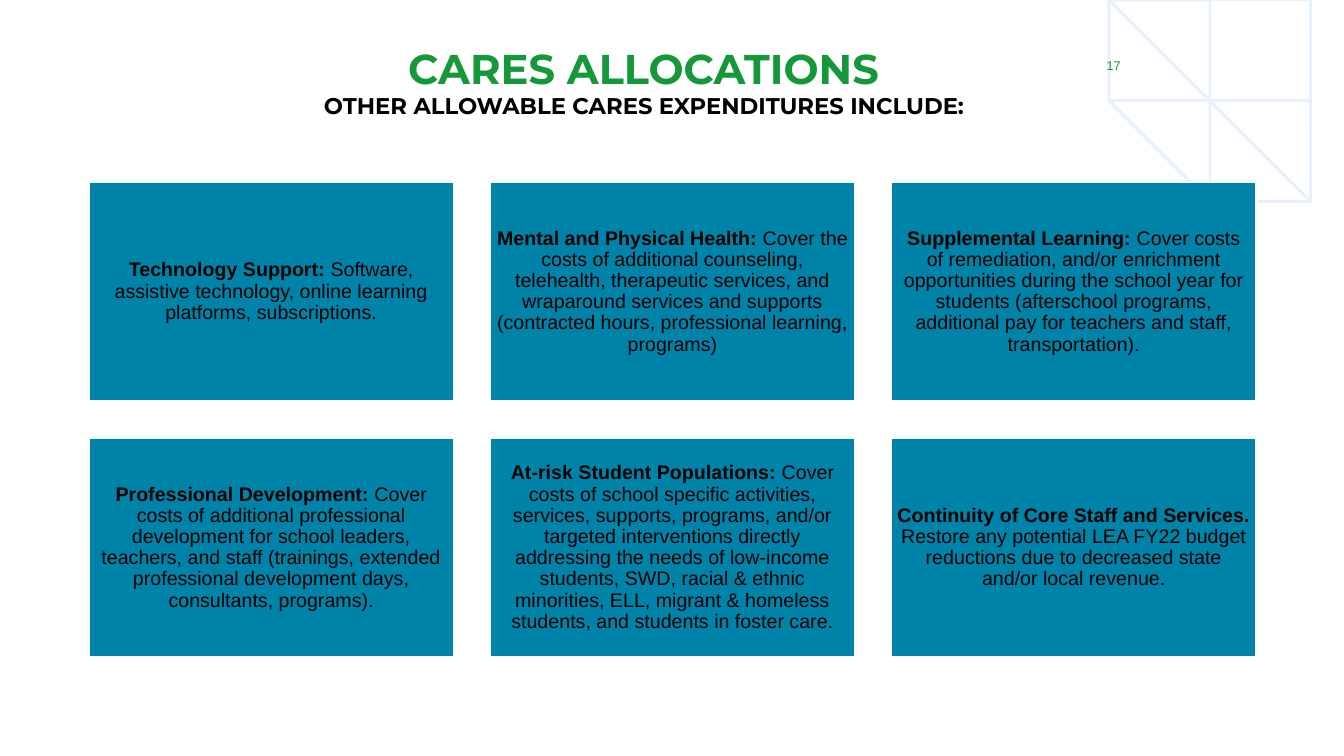
"""Build the slide on allowable CARES expenditures."""
from dataclasses import dataclass
from math import asin, cos, pi, sin

from pptx import Presentation
from pptx import util as u
from pptx.dml.color import RGBColor
from pptx.enum import shapes, text


@dataclass
class Theme:
    """Colours, fonts and type sizes."""
    green: str = "159839"
    black: str = "000000"
    teal: str = "0083A9"
    white: str = "FFFFFF"
    pale: str = "E6F0FE"
    head: str = "Montserrat"
    body: str = "Arial"
    big: float = 29.7
    mid: float = 16.2
    small: float = 14
    tiny: float = 9


def write(para, words, *, font, size, color, bold=False):
    """Add one formatted run to a paragraph."""
    run = para.add_run()
    run.text = words
    run.font.name = font
    run.font.size = u.Pt(size)
    run.font.bold = bold
    run.font.color.rgb = RGBColor.from_string(color)


class Deck:
    """Hold the theme and the current slide."""

    def __init__(self, theme):
        """Start a wide deck with one title slide."""
        self.theme = theme
        self.file = Presentation()
        self.file.slide_width = u.Inches(13.33)
        self.file.slide_height = u.Inches(7.5)
        self.slide = self.file.slides.add_slide(self.file.slide_layouts[5])

    def frame(self, shape, inset, anchor, space):
        """Set up a text frame and return its centred paragraph."""
        body = shape.text_frame
        body.word_wrap = True
        body.auto_size = text.MSO_AUTO_SIZE.NONE
        body.vertical_anchor = anchor
        body.margin_left = body.margin_right = u.Inches(inset)
        body.margin_top = body.margin_bottom = u.Inches(inset)
        para = body.paragraphs[0]
        para.alignment = text.PP_ALIGN.CENTER
        para.line_spacing = space
        return para

    def edge(self, shape, color, width):
        """Give a shape a plain line and no shadow."""
        shape.shadow.inherit = False
        shape.line.color.rgb = RGBColor.from_string(color)
        shape.line.width = u.Pt(width)

    def rings(self, x, y, radius, step, count, parts=12):
        """Draw the part of some rings that lies on the slide, as one outline."""
        pen = None
        for k in range(count):
            r = radius - k * step
            start = asin(-y / r)
            turns = [start + (pi / 2 - start) * i / parts for i in range(parts + 1)]
            first, *rest = [(x - r * cos(a), y + r * sin(a)) for a in turns]
            if pen is None:
                pen = self.slide.shapes.build_freeform(*first, scale=u.Inches(1))
            else:
                pen.move_to(*first)
            pen.add_line_segments(rest, close=False)
        shape = pen.convert_to_shape()
        shape.fill.background()
        self.edge(shape, self.theme.pale, 1.9)

    def title(self, main, sub, box):
        """Fill the title placeholder with a heading and a line below."""
        t = self.theme
        shape = self.slide.shapes.title
        shape.left, shape.top, shape.width, shape.height = map(u.Inches, box)
        para = self.frame(shape, 0.08, text.MSO_ANCHOR.TOP, 0.95)
        write(para, main, font=t.head, size=t.big, color=t.green, bold=True)
        para.add_line_break()
        write(para, sub, font=t.head, size=t.mid, color=t.black, bold=True)

    def label(self, words, box):
        """Add a small centred text box."""
        t = self.theme
        shape = self.slide.shapes.add_textbox(*map(u.Inches, box))
        para = self.frame(shape, 0.05, text.MSO_ANCHOR.MIDDLE, 1.0)
        write(para, words, font=t.body, size=t.tiny, color=t.green)

    def card(self, lead, words, box):
        """Add a filled card with a bold lead and plain text."""
        t = self.theme
        kind = shapes.MSO_SHAPE.RECTANGLE
        shape = self.slide.shapes.add_shape(kind, *map(u.Inches, box))
        shape.fill.solid()
        shape.fill.fore_color.rgb = RGBColor.from_string(t.teal)
        self.edge(shape, t.white, 1.5)
        para = self.frame(shape, 0.06, text.MSO_ANCHOR.MIDDLE, 0.9)
        style = dict(font=t.body, size=t.small, color=t.black)
        write(para, lead + " ", bold=True, **style)
        write(para, words, **style)


CARDS = [
    ("Technology Support:",
     "Software, assistive technology, online learning platforms, subscriptions."),
    ("Mental and Physical Health:",
     "Cover the costs of additional counseling, telehealth, therapeutic services, "
     "and wraparound services and supports (contracted hours, professional "
     "learning, programs)"),
    ("Supplemental Learning:",
     "Cover costs of remediation, and/or enrichment opportunities during the "
     "school year for students (afterschool programs, additional pay for "
     "teachers and staff, transportation)."),
    ("Professional Development:",
     "Cover costs of additional professional development for school leaders, "
     "teachers, and staff (trainings, extended professional development days, "
     "consultants, programs)."),
    ("At-risk Student Populations:",
     "Cover costs of school specific activities, services, supports, programs, "
     "and/or targeted interventions directly addressing the needs of low-income "
     "students, SWD, racial & ethnic minorities, ELL, migrant & homeless "
     "students, and students in foster care."),
    ("Continuity of Core Staff and Services.",
     "Restore any potential LEA FY22 budget reductions due to decreased state "
     "and/or local revenue."),
]


def main():
    """Draw the slide and save it."""
    deck = Deck(Theme())
    deck.rings(13.33, -0.17, 2.55, 0.14, 17)
    deck.title("CARES ALLOCATIONS", "OTHER ALLOWABLE CARES EXPENDITURES INCLUDE:",
               (2.01, 0.38, 8.75, 0.84))
    deck.label("17", (10.64, 0.5, 0.81, 0.3))
    for i, (lead, words) in enumerate(CARDS):
        row, col = divmod(i, 3)
        box = (0.88 + 3.98 * col, 1.81 + 2.54 * row, 3.62, 2.17)
        deck.card(lead, words, box)
    deck.file.save("out.pptx")


if __name__ == "__main__":
    main()
